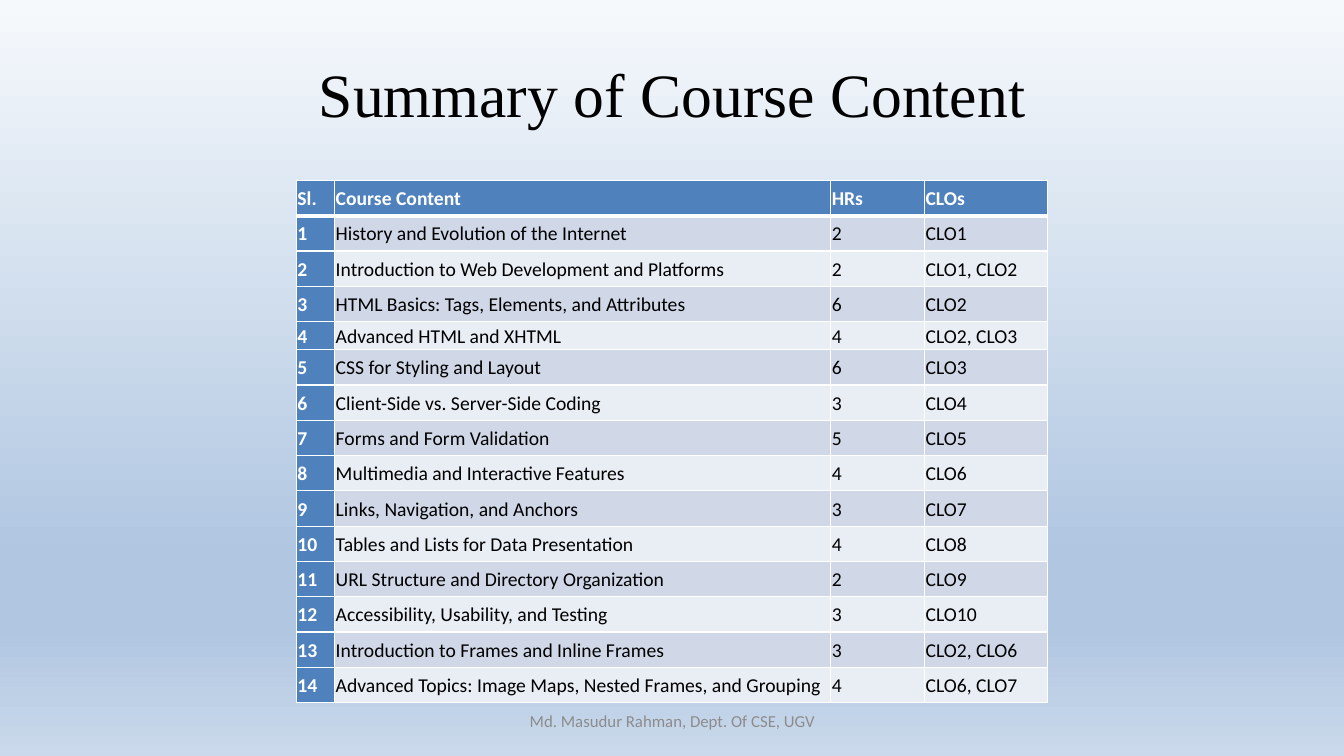
from lxml import etree
from pptx import Presentation
from pptx.dml.color import RGBColor
from pptx.enum.text import MSO_ANCHOR, PP_ALIGN
from pptx.oxml.ns import qn
from pptx.util import Inches, Pt

MIDDLE = MSO_ANCHOR.MIDDLE
CENTER = PP_ALIGN.CENTER

WHITE = RGBColor(0xFF, 0xFF, 0xFF)
BLACK = RGBColor(0x00, 0x00, 0x00)
GRAY = RGBColor(0x8C, 0x8C, 0x8C)
BLUE = RGBColor(0x4F, 0x81, 0xBD)
BANDS = [RGBColor(0xD0, 0xD8, 0xE8), RGBColor(0xE9, 0xED, 0xF4)]
STOPS = [
    (0, RGBColor(0xF6, 0xF9, 0xFC)),
    (74, RGBColor(0xB0, 0xC6, 0xE1)),
    (83, RGBColor(0xB0, 0xC6, 0xE1)),
    (100, RGBColor(0xCA, 0xD9, 0xEB)),
]

TITLE = {"name": "Times New Roman", "size": Pt(44)}
FOOTER = {"name": "Calibri", "size": Pt(12)}
HEAD = {"name": "Calibri", "size": Pt(14), "bold": True}
BODY = {"name": "Calibri", "size": Pt(14), "bold": False}
SPACING = {"line_spacing": 1.07, "space_after": Pt(8)}
INSET = Inches(0.01)
INSETS = {
    "margin_left": INSET,
    "margin_right": INSET,
    "margin_top": INSET,
    "margin_bottom": INSET,
    "vertical_anchor": MIDDLE,
}

WIDTHS = [0.38, 4.92, 0.93, 1.22]
ROW = 0.35
SHORT = 0.28
SHORT_ROW = 4

HEADER = ("Sl.", "Course Content", "HRs", "CLOs")
TOPICS = [
    ("History and Evolution of the Internet", "2", "CLO1"),
    ("Introduction to Web Development and Platforms", "2", "CLO1, CLO2"),
    ("HTML Basics: Tags, Elements, and Attributes", "6", "CLO2"),
    ("Advanced HTML and XHTML", "4", "CLO2, CLO3"),
    ("CSS for Styling and Layout", "6", "CLO3"),
    ("Client-Side vs. Server-Side Coding", "3", "CLO4"),
    ("Forms and Form Validation", "5", "CLO5"),
    ("Multimedia and Interactive Features", "4", "CLO6"),
    ("Links, Navigation, and Anchors", "3", "CLO7"),
    ("Tables and Lists for Data Presentation", "4", "CLO8"),
    ("URL Structure and Directory Organization", "2", "CLO9"),
    ("Accessibility, Usability, and Testing", "3", "CLO10"),
    ("Introduction to Frames and Inline Frames", "3", "CLO2, CLO6"),
    ("Advanced Topics: Image Maps, Nested Frames, and Grouping", "4", "CLO6, CLO7"),
]


def apply(target, values):
    for key, value in values.items():
        setattr(target, key, value)


def add_color(parent, color):
    etree.SubElement(parent, qn("a:srgbClr"), val=str(color))


def set_backdrop(slide):
    fill = slide.background.fill
    fill.gradient()
    fill.gradient_angle = 270
    stops = slide.element.find(".//" + qn("a:gsLst"))
    for stop in list(stops):
        stops.remove(stop)
    for place, color in STOPS:
        stop = etree.SubElement(stops, qn("a:gs"), pos=str(place * 1000))
        add_color(stop, color)


def add_text(slide, text, box, font, color):
    frame = slide.shapes.add_textbox(*map(Inches, box)).text_frame
    apply(frame, {"word_wrap": True, "vertical_anchor": MIDDLE})
    line = frame.paragraphs[0]
    line.text = text
    line.alignment = CENTER
    apply(line.font, font)
    line.font.color.rgb = color


def add_border(cell, side, width):
    props = cell._tc.get_or_add_tcPr()
    edge = etree.SubElement(props, qn("a:ln" + side), w=str(Pt(width)))
    add_color(etree.SubElement(edge, qn("a:solidFill")), WHITE)


def fill_cell(cell, text, row, col):
    is_head = row == 0 or col == 0
    cell.text = text
    apply(cell, INSETS)
    line = cell.text_frame.paragraphs[0]
    apply(line, SPACING)
    apply(line.font, HEAD if is_head else BODY)
    line.font.color.rgb = WHITE if is_head else BLACK
    thick = {(0, "B"), (1, "T")}
    for side in "LRTB":
        add_border(cell, side, 3 if (row, side) in thick else 1)
    cell.fill.solid()
    cell.fill.fore_color.rgb = BLUE if is_head else BANDS[(row - 1) % 2]


def add_topics(slide):
    rows = [HEADER] + [(str(num), *topic) for num, topic in enumerate(TOPICS, 1)]
    heights = [SHORT if num == SHORT_ROW else ROW for num in range(len(rows))]
    box = (2.94, 1.79, sum(WIDTHS), sum(heights))
    table = slide.shapes.add_table(len(rows), len(WIDTHS), *map(Inches, box)).table
    for col, width in zip(table.columns, WIDTHS):
        col.width = Inches(width)
    for row, height in zip(table.rows, heights):
        row.height = Inches(height)
    for row, texts in enumerate(rows):
        for col, text in enumerate(texts):
            fill_cell(table.cell(row, col), text, row, col)


def main():
    deck = Presentation()
    deck.slide_width = Inches(13.33)
    deck.slide_height = Inches(7.5)
    slide = deck.slides.add_slide(deck.slide_layouts[6])
    set_backdrop(slide)
    add_text(slide, "Summary of Course Content", (0.67, 0.3, 12, 1.25), TITLE, BLACK)
    add_topics(slide)
    add_text(slide, "Md. Masudur Rahman, Dept. Of CSE, UGV",
             (4.56, 6.95, 4.22, 0.4), FOOTER, GRAY)
    deck.save("out.pptx")


if __name__ == "__main__":
    main()
